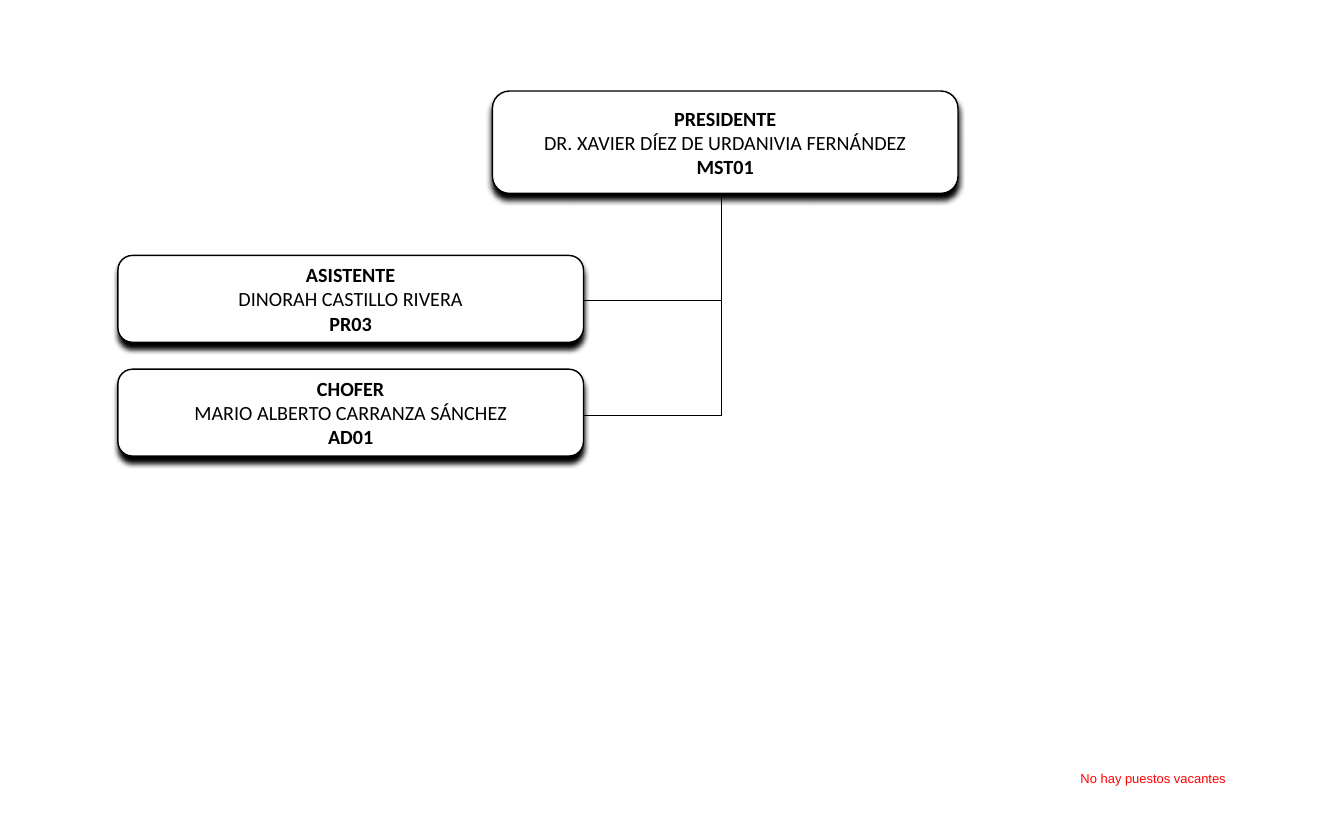
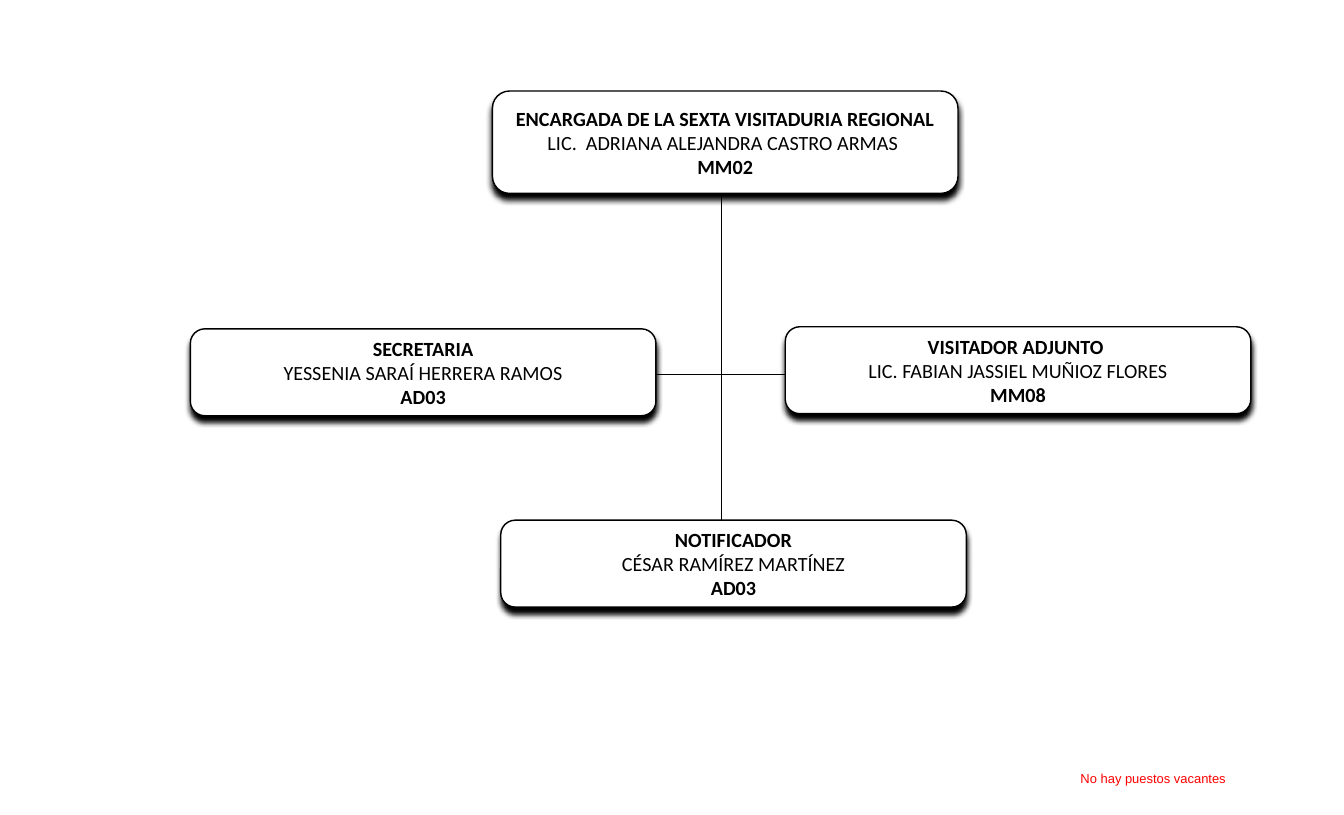
from pptx import Presentation
from pptx import util as u
from pptx.dml.color import RGBColor
from pptx.enum import shapes, text
from pptx.oxml import parse_xml
from pptx.oxml.ns import nsdecls, qn

PX = u.Inches(1) // 100
SLIDE_W, SLIDE_H = 1299, 788
BLACK, WHITE, RED = "000000", "FFFFFF", "FF0000"
CARD_W, HEAD_H, STAFF_H = 450, 99, 84
HEAD_X, HEAD_Y = 476, 88
TRUNK_X, TRUNK_Y = 697, 189
NOTE = "No hay puestos vacantes"
NOTE_BOX = (949, 740, 331, 25)

# head and staff: post, name, grade; staff adds left and top
# branches: left, right, height
CHARTS = [
    {
        "head": ("PRESIDENTE", "DR. XAVIER DÍEZ DE URDANIVIA FERNÁNDEZ", "MST01"),
        "staff": [
            ("ASISTENTE", "DINORAH CASTILLO RIVERA", "PR03", 114, 247),
            ("CHOFER", "MARIO ALBERTO CARRANZA SÁNCHEZ", "AD01", 114, 357),
        ],
        "trunk_end": 402,
        "branches": [(467, TRUNK_X, 291), (467, TRUNK_X, 402)],
    },
    {
        "head": ("ENCARGADA DE LA SEXTA VISITADURIA REGIONAL",
                 "LIC.  ADRIANA ALEJANDRA CASTRO ARMAS ", "MM02"),
        "staff": [
            ("SECRETARIA", "YESSENIA SARAÍ HERRERA RAMOS", "AD03", 184, 318),
            ("NOTIFICADOR", "CÉSAR RAMÍREZ MARTÍNEZ", "AD03", 484, 503),
            ("VISITADOR ADJUNTO ", "LIC. FABIAN JASSIEL MUÑIOZ FLORES", "MM08", 759, 316),
        ],
        "trunk_end": 503,
        "branches": [(594, 760, 362)],
    },
]


def color(value):
    return RGBColor.from_string(value)


def px(*values):
    return [v * PX for v in values]


def style(p, font, size, hue, bold=False):
    p.alignment = text.PP_ALIGN.CENTER
    for r in p.runs:
        r.font.name, r.font.size, r.font.bold = font, u.Pt(size), bold
        r.font.color.rgb = color(hue)


def add_effects(sp, inner=""):
    """Set the effect list of a shape; an empty one means no shadow."""
    sp._element.spPr.append(
        parse_xml(f'<a:effectLst {nsdecls("a")}>{inner}</a:effectLst>'))


def add_card(slide, lines, x, y, h):
    sp = slide.shapes.add_shape(
        shapes.MSO_SHAPE.ROUNDED_RECTANGLE, *px(x, y, CARD_W, h))
    sp.fill.solid()
    sp.fill.fore_color.rgb = color(WHITE)
    sp.line.color.rgb = color(BLACK)
    sp.line.width = u.Pt(1)
    add_effects(sp, f'<a:outerShdw blurRad="{u.Pt(4)}" dist="{u.Pt(4)}" '
                    f'dir="5400000" algn="ctr" rotWithShape="0">'
                    f'<a:srgbClr val="{BLACK}"/></a:outerShdw>')
    tf = sp.text_frame
    tf.word_wrap = False
    tf.vertical_anchor = text.MSO_ANCHOR.MIDDLE
    tf.margin_left = tf.margin_right = 17 * PX
    tf.margin_top = tf.margin_bottom = 9 * PX
    tf.text = "\n".join(lines)
    for i, p in enumerate(tf.paragraphs):
        style(p, "Calibri", 14, BLACK, bold=i != 1)


def add_line(slide, *ends):
    line = slide.shapes.add_connector(shapes.MSO_CONNECTOR.STRAIGHT, *px(*ends))
    line.line.color.rgb = color(BLACK)
    line.line.width = u.Pt(0.75)
    add_effects(line)


def add_note(slide):
    tf = slide.shapes.add_textbox(*px(*NOTE_BOX)).text_frame
    tf.word_wrap = True
    tf.auto_size = text.MSO_AUTO_SIZE.SHAPE_TO_FIT_TEXT
    tf.text = NOTE
    style(tf.paragraphs[0], "Arial", 9, RED)


def add_org_chart(prs, chart):
    slide = prs.slides.add_slide(prs.slide_layouts.get_by_name("Blank"))
    add_card(slide, chart["head"], HEAD_X, HEAD_Y, HEAD_H)
    add_line(slide, TRUNK_X, TRUNK_Y, TRUNK_X, chart["trunk_end"])
    for left, right, y in chart["branches"]:
        add_line(slide, left, y, right, y)
    for *lines, x, y in chart["staff"]:
        add_card(slide, lines, x, y, STAFF_H)
    add_note(slide)


def main():
    prs = Presentation()
    prs.slide_width, prs.slide_height = px(SLIDE_W, SLIDE_H)
    for chart in CHARTS:
        add_org_chart(prs, chart)
    prs.save("out.pptx")


if __name__ == "__main__":
    main()
